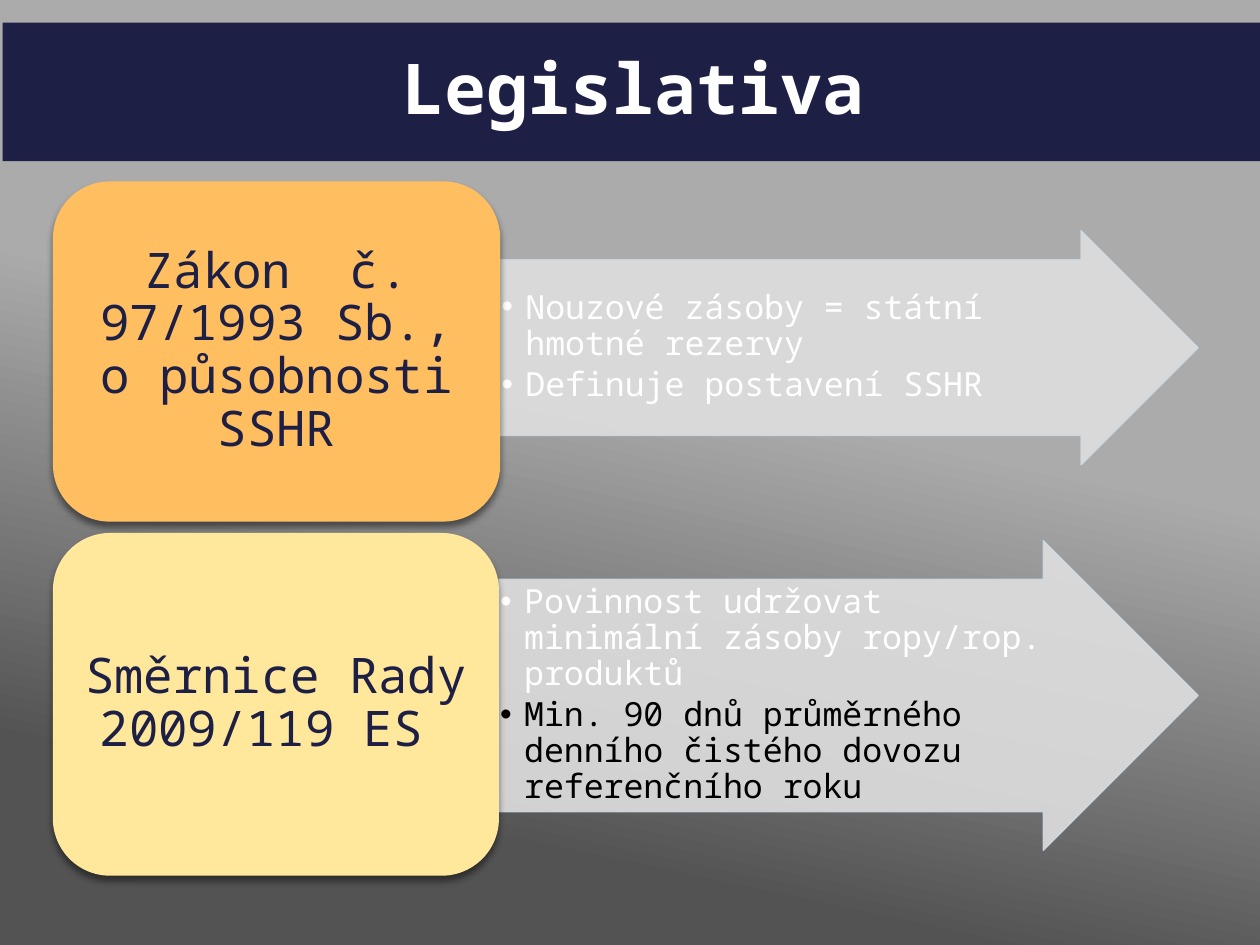
from lxml import etree
from pptx import Presentation
from pptx.dml.color import RGBColor
from pptx.enum.shapes import MSO_SHAPE as Shape
from pptx.enum.text import MSO_ANCHOR, MSO_AUTO_SIZE, PP_ALIGN
from pptx.oxml import parse_xml
from pptx.oxml.ns import nsdecls, qn
from pptx.util import Inches, Pt

COLORS = {
    "navy": "1D1F45", "white": "FFFFFF", "black": "000000",
    "orange": "FFBF61", "yellow": "FFE79B",
    "arrow": "DFDFDF", "arrow_line": "CFDAE5",
    "light_gray": "ABABAB", "dark_gray": "535353",
}
FONT = "Noto Sans Mono"
SHADOW = (
    f'<a:effectLst {nsdecls("a")}>'
    '<a:outerShdw blurRad="50800" dist="38100" dir="5400000" rotWithShape="0">'
    '<a:srgbClr val="000000"><a:alpha val="46000"/></a:srgbClr>'
    '</a:outerShdw></a:effectLst>'
)

# Per row: box and arrow positions, list area, and list items with colours
ROWS = [
    {
        "label": "Zákon  č. 97/1993 Sb., o působnosti SSHR", "fill": "orange",
        "box": (0.42, 1.44, 3.55, 2.7),
        "arrow": (3.97, 1.83, 5.54, 1.86),
        "list": (3.97, 2.06, 4.85, 1.39),
        "items": [("Nouzové zásoby = státní hmotné rezervy", "white"),
                  ("Definuje postavení SSHR", "white")],
    },
    {
        "label": "Směrnice Rady 2009/119 ES ", "fill": "yellow",
        "box": (0.42, 4.23, 3.54, 2.72),
        "arrow": (3.96, 4.29, 5.55, 2.46),
        "list": (3.96, 4.6, 4.63, 1.84),
        "items": [("Povinnost udržovat minimální zásoby ropy/rop. produktů", "white"),
                  ("Min. 90 dnů průměrného denního čistého dovozu "
                   "referenčního roku", "black")],
    },
]


def rgb(name):
    return RGBColor.from_string(COLORS[name])


def write(shape, items, size, align, margins, bold=False, bulleted=False):
    """Fill a shape with one paragraph per (text, colour) item."""
    frame = shape.text_frame
    horizontal, vertical = (Inches(margin) for margin in margins)
    frame_format = {
        "word_wrap": True, "auto_size": MSO_AUTO_SIZE.NONE,
        "vertical_anchor": MSO_ANCHOR.MIDDLE,
        "margin_left": horizontal, "margin_right": horizontal,
        "margin_top": vertical, "margin_bottom": vertical,
    }
    for name, value in frame_format.items():
        setattr(frame, name, value)
    for index, (text, color) in enumerate(items):
        paragraph = frame.add_paragraph() if index else frame.paragraphs[0]
        paragraph_format = {
            "alignment": align, "line_spacing": 0.9,
            "space_before": Pt(0), "space_after": Pt(3 if bulleted else 0),
        }
        for name, value in paragraph_format.items():
            setattr(paragraph, name, value)
        run = paragraph.add_run()
        run.text = text
        font_format = {"name": FONT, "size": Pt(size), "bold": bold}
        for name, value in font_format.items():
            setattr(run.font, name, value)
        run.font.color.rgb = rgb(color)
        if bulleted:
            properties = paragraph._p.get_or_add_pPr()
            properties.set("marL", str(Inches(0.19)))
            properties.set("indent", str(-Inches(0.19)))
            etree.SubElement(properties, qn("a:buChar")).set("char", "•")


presentation = Presentation()
presentation.slide_width, presentation.slide_height = Inches(10), Inches(7.5)
slide = presentation.slides.add_slide(presentation.slide_layouts[3])
title, *lists = [slide.placeholders[index] for index in (0, 1, 2)]

background = slide.background.fill
background.gradient()
background.gradient_angle = 258
stops = [(0.42, "light_gray"), (0.83, "dark_gray")]
for stop, (position, color) in zip(background.gradient_stops, stops):
    stop.position = position
    stop.color.rgb = rgb(color)

title.left, title.top = Inches(0.02), Inches(0.18)
title.width, title.height = Inches(10.01), Inches(1.1)
title.fill.solid()
title.fill.fore_color.rgb = rgb("navy")
write(title, [("Legislativa", "white")], 40, PP_ALIGN.CENTER, (0.1, 0.05), bold=True)

for row, bullet_list in zip(ROWS, lists):
    arrow = slide.shapes.add_shape(Shape.RIGHT_ARROW, *map(Inches, row["arrow"]))
    arrow.adjustments[0], arrow.adjustments[1] = 0.75, 0.5
    arrow.shadow.inherit = False
    arrow.fill.solid()
    arrow.fill.fore_color.rgb = rgb("arrow")
    arrow.line.color.rgb = rgb("arrow_line")
    arrow.line.width = Pt(0.75)
    for color in arrow.element.spPr.iter(qn("a:srgbClr")):
        etree.SubElement(color, qn("a:alpha")).set("val", "90000")

    # The list stands in front of its arrow
    arrow.element.addnext(bullet_list.element)
    bullet_list.left, bullet_list.top, bullet_list.width, bullet_list.height = map(
        Inches, row["list"])
    write(bullet_list, row["items"], 19, PP_ALIGN.LEFT, (0.01, 0.01), bulleted=True)

    box = slide.shapes.add_shape(Shape.ROUNDED_RECTANGLE, *map(Inches, row["box"]))
    box.fill.solid()
    box.fill.fore_color.rgb = rgb(row["fill"])
    box.line.fill.background()
    box.element.spPr.append(parse_xml(SHADOW))
    write(box, [(row["label"], "navy")], 28, PP_ALIGN.CENTER, (0.12, 0.06))

presentation.save("out.pptx")
